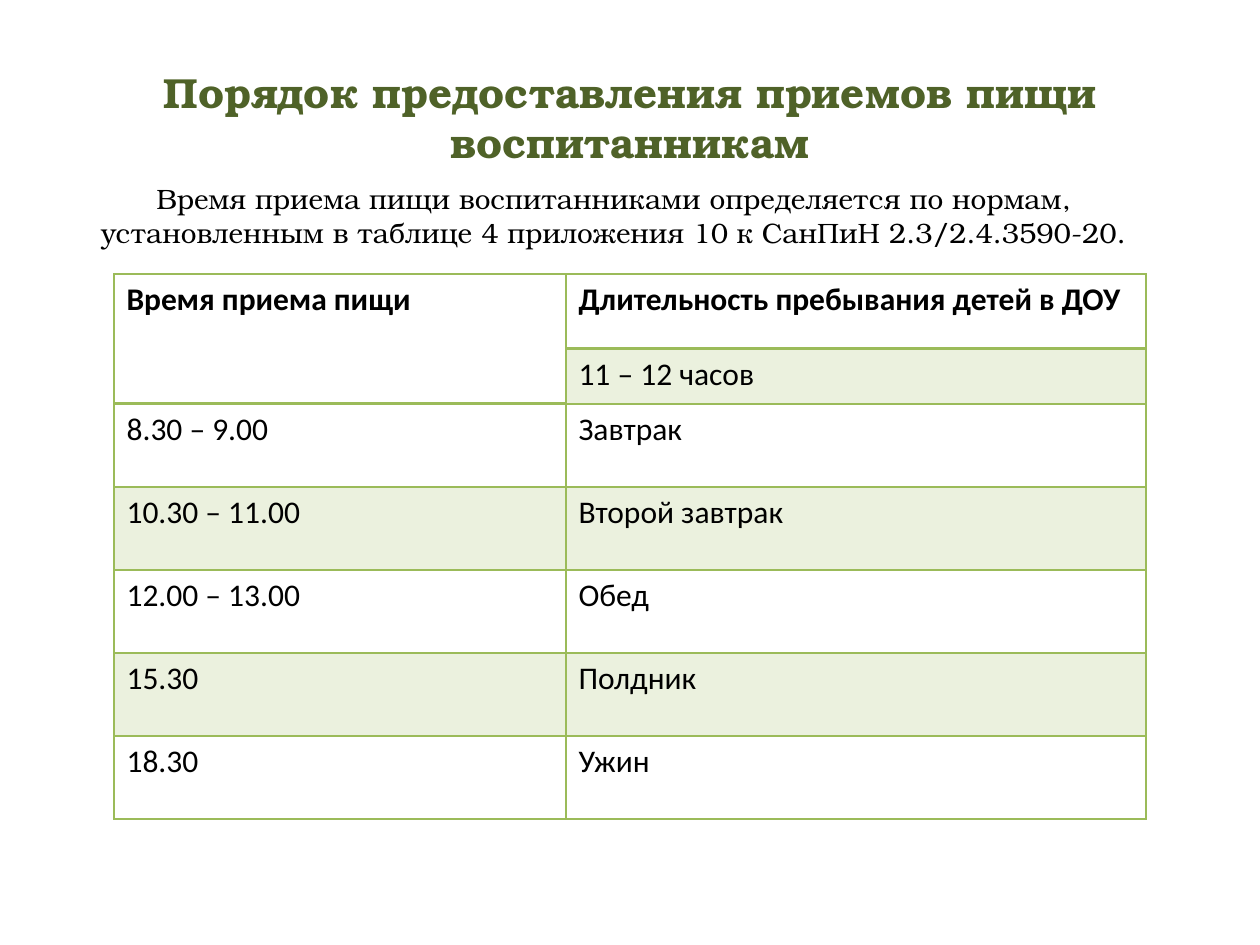
import pptx
import pptx.dml.color
import pptx.enum.text
import pptx.oxml
import pptx.oxml.ns
import pptx.util

PX = 914400 / 126
COLORS = {"title": "4F6228", "text": "000000", "border": "9BBB59", "band": "EBF1DE"}
SERIF, SANS = "TeX Gyre Bonum", "Calibri"

TITLE = "Порядок предоставления приемов пищи воспитанникам"
INTRO = ("Время приема пищи воспитанниками определяется по нормам, "
         "установленным в таблице 4 приложения 10 к СанПиН 2.3/2.4.3590-20.")
ROWS = [
    ("Время приема пищи", "Длительность пребывания детей в ДОУ"),
    ("", "11 – 12 часов"),
    ("8.30 – 9.00", "Завтрак"),
    ("10.30 – 11.00", "Второй завтрак"),
    ("12.00 – 13.00", "Обед"),
    ("15.30", "Полдник"),
    ("18.30", "Ужин"),
]
COLUMN_WIDTHS = [452, 580]
ROW_HEIGHTS = [75, 55] + [83] * 5

TITLE_BOX = (63, 38, 1134, 157)
INTRO_BOX = (63, 175, 1102, 80)
TABLE_BOX = (114, 274, sum(COLUMN_WIDTHS), sum(ROW_HEIGHTS))


def px(length):
    return pptx.util.Emu(round(length * PX))


def color(name):
    return pptx.dml.color.RGBColor.from_string(COLORS[name])


def style(paragraph, font_name, size, color_name, bold=False):
    paragraph.font.name = font_name
    paragraph.font.size = pptx.util.Pt(size)
    paragraph.font.bold = bold
    paragraph.font.color.rgb = color(color_name)


def fill_text(shape, text, anchor, **font):
    frame = shape.text_frame
    frame.word_wrap = True
    frame.vertical_anchor = anchor
    frame.text = text
    frame.paragraphs[0].alignment = pptx.enum.text.PP_ALIGN.CENTER
    style(frame.paragraphs[0], **font)


def set_borders(cell, **widths):
    """Draw the cell edges; widths are points by edge letter (L, R, T, B)."""
    properties = cell._tc.get_or_add_tcPr()
    for position, edge in enumerate("LRTB"):
        line = pptx.oxml.parse_xml(
            f'<a:ln{edge} {pptx.oxml.ns.nsdecls("a")} w="{pptx.util.Pt(widths.get(edge, 1))}">'
            f'<a:solidFill><a:srgbClr val="{COLORS["border"]}"/></a:solidFill></a:ln{edge}>')
        properties.insert(position, line)


def add_schedule(slide):
    table = slide.shapes.add_table(len(ROWS), 2, *map(px, TABLE_BOX)).table
    for column, width in zip(table.columns, COLUMN_WIDTHS):
        column.width = px(width)
    for row, height in zip(table.rows, ROW_HEIGHTS):
        row.height = px(height)
    table.cell(0, 0).merge(table.cell(1, 0))

    heading_ends = [1, 0]  # last heading row of each column
    for row, texts in enumerate(ROWS):
        for column, text in enumerate(texts):
            cell = table.cell(row, column)
            if text:
                cell.text = text
            style(cell.text_frame.paragraphs[0], SANS, 18, "text", bold=row == 0)
            if row % 2 and not cell.is_spanned:
                cell.fill.solid()
                cell.fill.fore_color.rgb = color("band")
            else:
                cell.fill.background()
            end = heading_ends[column]
            ends_heading = row == end or cell.is_merge_origin
            set_borders(cell, B=2 if ends_heading else 1, T=2 if row == end + 1 else 1)


def main():
    presentation = pptx.Presentation()
    presentation.slide_width, presentation.slide_height = px(1260), px(945)
    slide = presentation.slides.add_slide(presentation.slide_layouts[5])

    title = slide.shapes.title
    title.left, title.top, title.width, title.height = map(px, TITLE_BOX)
    fill_text(title, TITLE, pptx.enum.text.MSO_ANCHOR.MIDDLE,
              font_name=SERIF, size=24, color_name="title", bold=True)

    intro = slide.shapes.add_textbox(*map(px, INTRO_BOX))
    fill_text(intro, INTRO, pptx.enum.text.MSO_ANCHOR.BOTTOM,
              font_name=SERIF, size=16, color_name="text")

    add_schedule(slide)
    presentation.save("out.pptx")


if __name__ == "__main__":
    main()
